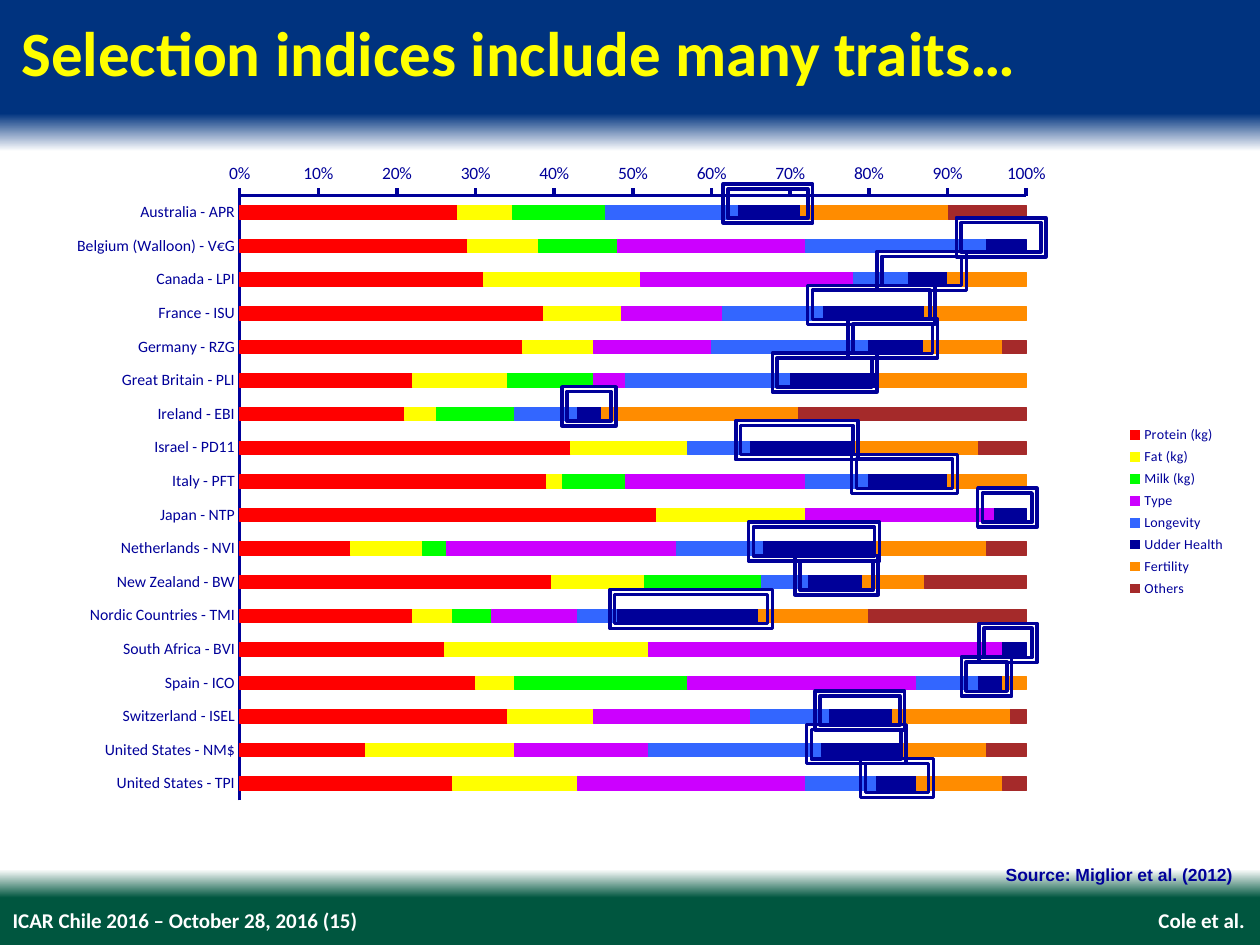
from lxml import etree
from pptx import Presentation
from pptx.chart.data import CategoryChartData
from pptx.dml.color import RGBColor
from pptx.enum.chart import XL_AXIS_CROSSES, XL_CHART_TYPE, XL_LEGEND_POSITION, XL_TICK_MARK
from pptx.enum.shapes import MSO_SHAPE
from pptx.enum.text import MSO_ANCHOR, PP_ALIGN
from pptx.oxml import parse_xml
from pptx.oxml.ns import nsdecls, qn
from pptx.util import Inches, Pt

LEFT, RIGHT = PP_ALIGN.LEFT, PP_ALIGN.RIGHT
TOP, MIDDLE = MSO_ANCHOR.TOP, MSO_ANCHOR.MIDDLE
NO_TICK, OUTSIDE = XL_TICK_MARK.NONE, XL_TICK_MARK.OUTSIDE

COLORS = {
    "blue": "00337F", "white": "FFFFFF", "green": "00563F", "navy": "000099", "title": "FFFF00",
    "Protein (kg)": "FF0000", "Fat (kg)": "FFFF00", "Milk (kg)": "00FF00", "Type": "CC00FF",
    "Longevity": "3366FF", "Udder Health": "000099", "Fertility": "FF8C00", "Others": "A52A2A",
}
BACKGROUND_STOPS = [(0, "blue"), (12, "blue"), (16, "white"), (92, "white"), (95, "green"), (100, "green")]
TRAITS = ["Protein (kg)", "Fat (kg)", "Milk (kg)", "Type", "Longevity", "Udder Health", "Fertility", "Others"]

# Index name, weight of each trait, left and width of the udder health frame
INDICES = [
    ("Australia - APR", (28, 7, 12, None, 17, 8, 19, 10), 5.74, 0.71),
    ("Belgium (Walloon) - V€G", (29, 9, 10, 24, 23, 5, None, None), 7.59, 0.71),
    ("Canada - LPI", (31, 20, None, 27, 7, 5, 10, None), 6.96, 0.71),
    ("France - ISU", (39, 10, None, 13, 13, 13, 13, None), 6.41, 1.01),
    ("Germany - RZG", (36, 9, None, 15, 20, 7, 10, 3), 6.73, 0.71),
    ("Great Britain - PLI", (22, 12, 11, 4, 21, 11, 19, None), 6.13, 0.83),
    ("Ireland - EBI", (21, 4, 10, None, 8, 3, 25, 29), 4.46, 0.43),
    ("Israel - PD11", (42, 15, None, None, 8, 13, 16, 6), 5.84, 0.97),
    ("Italy - PFT", (39, 2, 8, 23, 8, 10, 10, None), 6.76, 0.84),
    ("Japan - NTP", (53, 19, None, 24, None, 4, None, None), 7.76, 0.47),
    ("Netherlands - NVI", (14, 9, 3, 29, 11, 14, 14, 5), 5.94, 1.04),
    ("New Zealand - BW", (40, 12, 15, None, 6, 7, 8, 13), 6.31, 0.66),
    ("Nordic Countries - TMI", (22, 5, 5, 11, 5, 18, 14, 20), 4.84, 1.29),
    ("South Africa - BVI", (26, 26, None, 45, None, 3, None, None), 7.77, 0.46),
    ("Spain - ICO", (30, 5, 22, 29, 8, 3, 3, None), 7.63, 0.40),
    ("Switzerland - ISEL", (34, 11, None, 20, 10, 8, 15, 2), 6.47, 0.71),
    ("United States - NM$", (16, 19, None, 17, 22, 10, 11, 5), 6.40, 0.79),
    ("United States - TPI", (27, 16, None, 29, 9, 5, 11, 3), 6.83, 0.58),
]
FRAME_TOP, FRAME_BOTTOM_ROW_TOP, FRAME_HEIGHT = 1.46, 6.02, 0.31


def color(name):
    return RGBColor.from_string(COLORS[name])


def write(box, text, size, font, color_name, align=LEFT, anchor=TOP, inset=0, wrap=True):
    frame = box.text_frame
    frame.word_wrap = wrap
    frame.vertical_anchor = anchor
    frame.margin_left = frame.margin_right = Inches(inset)
    frame.margin_top = frame.margin_bottom = Inches(inset)
    para = frame.paragraphs[0]
    para.text = text
    para.alignment = align
    para.font.size = Pt(size)
    para.font.name = font
    para.font.bold = True
    para.font.color.rgb = color(color_name)


deck = Presentation()
deck.slide_width, deck.slide_height = Inches(10), Inches(7.5)
page = deck.slides.add_slide(deck.slide_layouts[5])

# Background: blue header and green footer fading to white
background = page.background.fill
background.gradient()
background.gradient_angle = 270
stop_list = next(page.element.iter(qn("a:gsLst")))
for stop in list(stop_list):
    stop_list.remove(stop)
for percent, name in BACKGROUND_STOPS:
    stop = etree.SubElement(stop_list, qn("a:gs"), pos=str(percent * 1000))
    etree.SubElement(stop, qn("a:srgbClr"), val=COLORS[name])

# Title, footer and source
title = page.shapes.title
title.left, title.top, title.width, title.height = Inches(0.17), Inches(0.11), Inches(9.66), Inches(0.7)
write(title, "Selection indices include many traits…", 36, "Calibri", "title")

authors = page.shapes.add_textbox(Inches(9.19), Inches(7.2), Inches(0.69), Inches(0.2))
write(authors, "Cole et al.", 12, "Calibri", "white", RIGHT, MIDDLE, wrap=False)
event = page.shapes.add_textbox(Inches(0.1), Inches(7.2), Inches(7.42), Inches(0.2))
write(event, "ICAR Chile 2016 – October 28, 2016 (15)", 12, "Calibri", "white", LEFT, MIDDLE)
source = page.shapes.add_textbox(Inches(5.74), Inches(6.81), Inches(4.09), Inches(0.27))
write(source, "Source: Miglior et al. (2012)", 10, "Arial", "navy", RIGHT, inset=0.05)

# Stacked bars of trait weights
data = CategoryChartData()
data.categories = [index[0] for index in INDICES]
for number, trait in enumerate(TRAITS):
    data.add_series(trait, [index[1][number] for index in INDICES])
chart = page.shapes.add_chart(
    XL_CHART_TYPE.BAR_STACKED_100, Inches(-0.08), Inches(1.3), Inches(9.91), Inches(5.49), data
).chart
chart.has_title = False
chart.font.name = "Calibri"
chart.font.size = Pt(10)

plot = chart.plots[0]
plot.gap_width = 150
plot.overlap = 100
plot.vary_by_categories = False
for series in plot.series:
    series.format.fill.solid()
    series.format.fill.fore_color.rgb = color(series.name)
    series.format.line.color.rgb = color(series.name)
    series.format.line.width = Pt(0.5)

for axis, size, tick in ((chart.category_axis, 9, NO_TICK), (chart.value_axis, 10, OUTSIDE)):
    axis.has_major_gridlines = False
    axis.major_tick_mark = tick
    axis.minor_tick_mark = NO_TICK
    axis.format.line.color.rgb = color("navy")
    axis.format.line.width = Pt(2)
    axis.tick_labels.font.size = Pt(size)
    axis.tick_labels.font.color.rgb = color("navy")
chart.category_axis.reverse_order = True
chart.category_axis.crosses = XL_AXIS_CROSSES.MAXIMUM
chart.value_axis.minimum_scale = 0
chart.value_axis.maximum_scale = 1
chart.value_axis.major_unit = 0.1
chart.value_axis.tick_labels.number_format = "0%"
chart.value_axis.tick_labels.number_format_is_linked = False

chart.has_legend = True
chart.legend.position = XL_LEGEND_POSITION.RIGHT
chart.legend.include_in_layout = False
chart.legend.font.size = Pt(8)
chart.legend.font.color.rgb = color("navy")

# Fixed inner plot area
plot_area = next(chart.element.iter(qn("c:plotArea")))
for layout in plot_area.findall(qn("c:layout")):
    plot_area.remove(layout)
plot_area.insert(0, parse_xml(
    f'<c:layout {nsdecls("c")}><c:manualLayout><c:layoutTarget val="inner"/>'
    '<c:xMode val="edge"/><c:yMode val="edge"/>'
    '<c:x val="0.2"/><c:y val="0.04"/><c:w val="0.63"/><c:h val="0.88"/>'
    '</c:manualLayout></c:layout>'
))

# Frames around the udder health share, one per row
row_step = (FRAME_BOTTOM_ROW_TOP - FRAME_TOP) / (len(INDICES) - 1)
for row, (_, _, left, width) in enumerate(INDICES):
    marker = page.shapes.add_shape(
        MSO_SHAPE.FRAME, Inches(left), Inches(FRAME_TOP + row * row_step), Inches(width), Inches(FRAME_HEIGHT)
    )
    marker.shadow.inherit = False
    marker.fill.background()
    marker.line.color.rgb = color("navy")
    marker.line.width = Pt(2)

deck.save("out.pptx")
